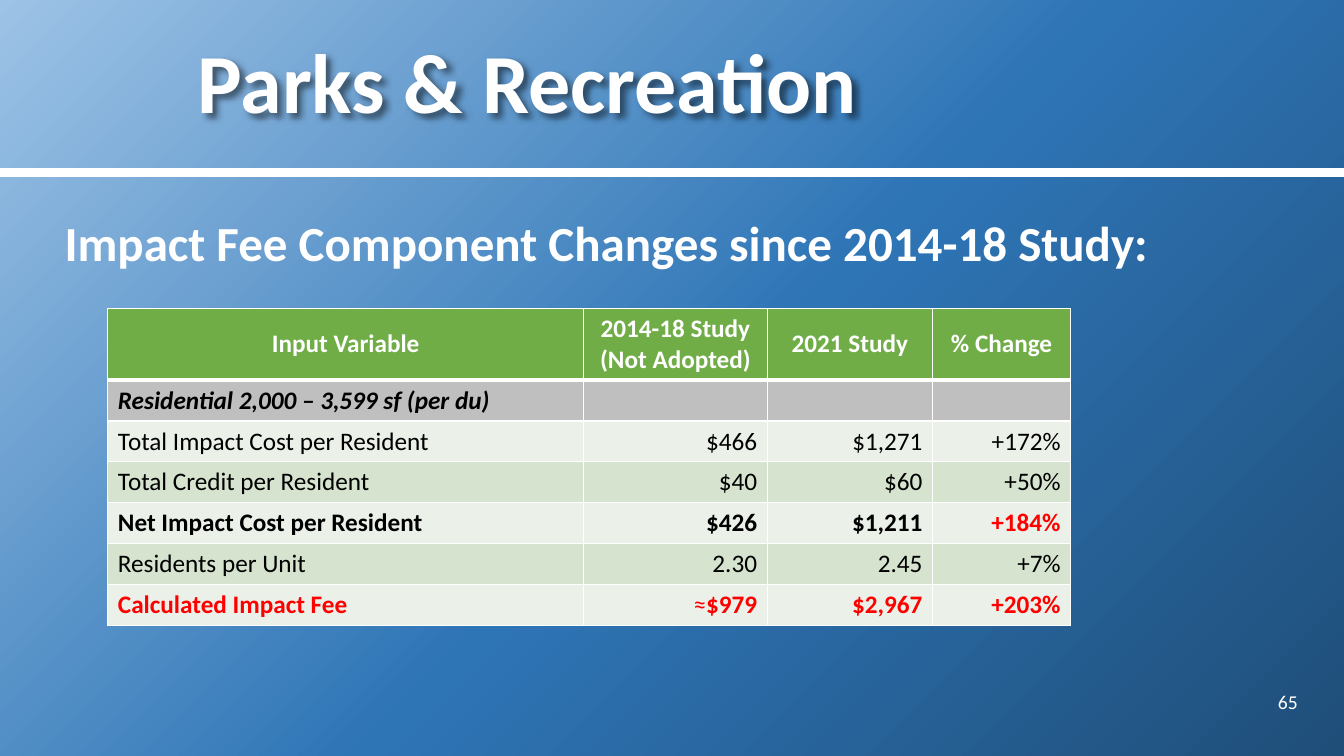
from lxml import etree
from pptx import Presentation
from pptx.dml.color import RGBColor
from pptx.enum.shapes import MSO_CONNECTOR
from pptx.enum.text import MSO_ANCHOR as Anchor, MSO_AUTO_SIZE as AutoSize, PP_ALIGN as Align
from pptx.oxml import parse_xml
from pptx.oxml.ns import nsdecls, qn
from pptx.util import Inches, Pt

WHITE, BLACK, RED = "FFFFFF", "000000", "FF0000"
HEADER_GREEN, SECTION_GRAY = "70AD47", "BFBFBF"
BANDS = ["EBF1E9", "D5E3CF"]
BACKGROUND_STOPS = [(0, "9DC3E6"), (53, "2E75B6"), (100, "1F4E79")]

COLUMN_WIDTHS = [4.72, 1.82, 1.64, 1.37]
HEADER_HEIGHT, ROW_HEIGHT = 0.71, 0.4
FEE_ROWS = [
    ["Input Variable", "2014-18 Study (Not Adopted)", "2021 Study", "% Change"],
    ["Residential 2,000 – 3,599 sf (per du)", "", "", ""],
    ["Total Impact Cost per Resident", "$466", "$1,271", "+172%"],
    ["Total Credit per Resident", "$40", "$60", "+50%"],
    ["Net Impact Cost per Resident", "$426", "$1,211", "+184%"],
    ["Residents per Unit", "2.30", "2.45", "+7%"],
    ["Calculated Impact Fee", "≈$979", "$2,967", "+203%"],
]
HEADER, SECTION, NET_COST, FEE = 0, 1, 4, 6
BOLD_ROWS = {HEADER, SECTION, NET_COST, FEE}
CHANGE_COLUMN = 3


def rgb(hex_color):
    return RGBColor.from_string(hex_color)


def format_run(run, size, color, bold=False, italic=False):
    font = run.font
    font.name, font.size = "Calibri", Pt(size)
    font.bold, font.italic = bold, italic
    font.color.rgb = rgb(color)


def place(shape, left, top, width, height):
    shape.left, shape.top = Inches(left), Inches(top)
    shape.width, shape.height = Inches(width), Inches(height)


def paint_background(slide):
    stops = "".join(
        f'<a:gs pos="{percent * 1000}"><a:srgbClr val="{color}"/></a:gs>'
        for percent, color in BACKGROUND_STOPS
    )
    background = parse_xml(
        f'<p:bg {nsdecls("p", "a")}><p:bgPr><a:gradFill rotWithShape="1">'
        f'<a:gsLst>{stops}</a:gsLst><a:lin ang="2700000" scaled="0"/></a:gradFill>'
        "<a:effectLst/></p:bgPr></p:bg>"
    )
    slide.element.cSld.insert(0, background)


def add_divider(slide, left, top, width):
    divider = slide.shapes.add_connector(
        MSO_CONNECTOR.STRAIGHT, Inches(left), Inches(top), Inches(left + width), Inches(top)
    )
    divider.line.color.rgb = rgb(WHITE)
    divider.line.width = Pt(6)
    etree.SubElement(divider.element.spPr, qn("a:effectLst"))


def fill_title(slide, left, top, width, height):
    title = slide.shapes.title
    place(title, left, top, width, height)
    frame = title.text_frame
    frame.text = "Parks & Recreation"
    frame.auto_size, frame.vertical_anchor = AutoSize.NONE, Anchor.MIDDLE
    heading = frame.paragraphs[0]
    heading.alignment, heading.line_spacing = Align.LEFT, 0.9
    format_run(heading.runs[0], 60, WHITE, bold=True)
    title.element.spPr.append(parse_xml(
        f'<a:effectLst {nsdecls("a")}>'
        '<a:outerShdw blurRad="50800" dist="50800" dir="2700000" algn="tl" rotWithShape="0">'
        '<a:srgbClr val="000000"><a:alpha val="50000"/></a:srgbClr>'
        "</a:outerShdw></a:effectLst>"
    ))


def fill_body(slide, left, top, width, height):
    body = slide.placeholders[1]
    place(body, left, top, width, height)
    frame = body.text_frame
    frame.text = "Impact Fee Component Changes since 2014-18 Study:"
    frame.auto_size, frame.vertical_anchor = AutoSize.NONE, Anchor.TOP
    subtitle = frame.paragraphs[0]
    properties = subtitle._p.get_or_add_pPr()
    properties.set("marL", "0")
    properties.set("indent", "0")
    etree.SubElement(properties, qn("a:buNone"))
    subtitle.alignment = Align.LEFT
    subtitle.line_spacing, subtitle.space_before = 1.2, Pt(0)
    format_run(subtitle.runs[0], 35, WHITE, bold=True)


def set_borders(cell, bottom_width):
    properties = cell._tc.get_or_add_tcPr()
    for side in "LRTB":
        width = Pt(bottom_width if side == "B" else 1)
        properties.append(parse_xml(
            f'<a:ln{side} {nsdecls("a")} w="{width}"><a:solidFill>'
            f'<a:srgbClr val="{WHITE}"/></a:solidFill></a:ln{side}>'
        ))


def row_fill(row):
    if row == HEADER:
        return HEADER_GREEN
    return SECTION_GRAY if row == SECTION else BANDS[row % 2]


def text_color(row, column):
    if row == HEADER:
        return WHITE
    is_red = row == FEE or (row == NET_COST and column == CHANGE_COLUMN)
    return RED if is_red else BLACK


def fill_cell(cell, row, column, text):
    set_borders(cell, 3 if row == HEADER else 1)
    cell.fill.solid()
    cell.fill.fore_color.rgb = rgb(row_fill(row))
    cell.vertical_anchor = Anchor.MIDDLE
    entry = cell.text_frame.paragraphs[0]
    if row == HEADER:
        entry.alignment = Align.CENTER
    else:
        entry.alignment = Align.RIGHT if column else Align.LEFT
    if not text:
        entry.font.size = Pt(18)
        return
    sign = "≈" if text.startswith("≈") else ""
    entry.text = sign or text
    if sign:
        entry.add_run().text = text.removeprefix(sign)
    for run in entry.runs:
        bold = row in BOLD_ROWS and run.text != "≈"
        format_run(run, 18, text_color(row, column), bold, italic=row == SECTION)


def add_fee_table(slide, left, top):
    height = HEADER_HEIGHT + ROW_HEIGHT * (len(FEE_ROWS) - 1)
    fee_table = slide.shapes.add_table(
        len(FEE_ROWS), len(COLUMN_WIDTHS),
        Inches(left), Inches(top), Inches(sum(COLUMN_WIDTHS)), Inches(height),
    ).table
    for column, width in zip(fee_table.columns, COLUMN_WIDTHS):
        column.width = Inches(width)
    for row, entries in enumerate(FEE_ROWS):
        fee_table.rows[row].height = Inches(HEADER_HEIGHT if row == HEADER else ROW_HEIGHT)
        for column, text in enumerate(entries):
            fill_cell(fee_table.cell(row, column), row, column, text)


def add_page_number(slide, left, top, width, height):
    frame = slide.shapes.add_textbox(
        Inches(left), Inches(top), Inches(width), Inches(height)
    ).text_frame
    frame.word_wrap = True
    frame.vertical_anchor = Anchor.MIDDLE
    frame.text = "65"
    number = frame.paragraphs[0]
    number.alignment = Align.RIGHT
    format_run(number.runs[0], 14, WHITE)


def main():
    deck = Presentation()
    deck.slide_width, deck.slide_height = Inches(13.33), Inches(7.5)
    slide = deck.slides.add_slide(deck.slide_layouts[1])
    paint_background(slide)
    add_divider(slide, 0, 1.71, 13.33)
    fill_title(slide, 1.86, 0, 11.1, 1.71)
    fill_body(slide, 0.54, 1.94, 12.42, 5.27)
    add_fee_table(slide, 1.07, 3.06)
    add_page_number(slide, 12.08, 6.76, 0.89, 0.4)
    deck.save("out.pptx")


if __name__ == "__main__":
    main()
